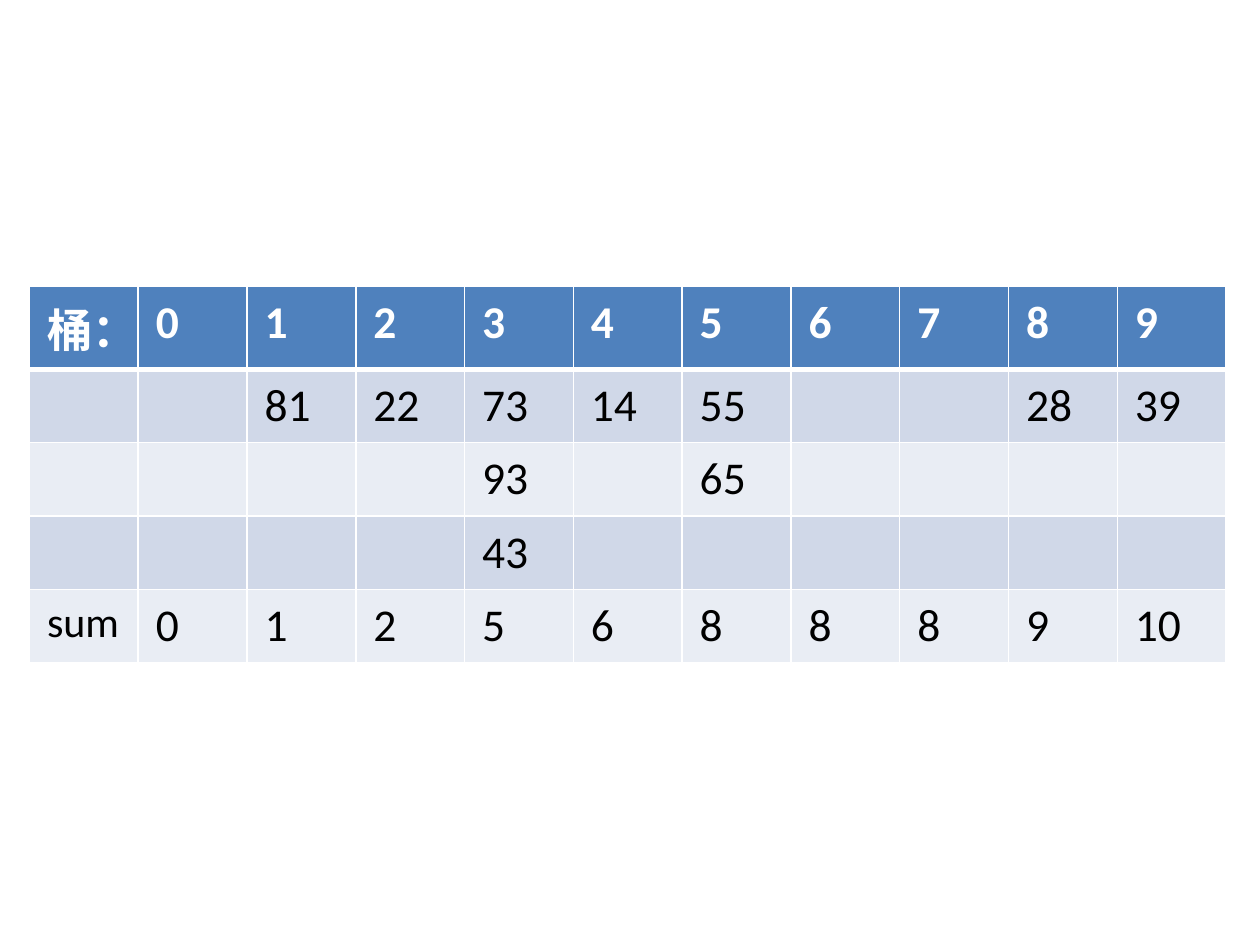
from lxml.etree import SubElement
from pptx import Presentation
from pptx.dml.color import RGBColor as Rgb
from pptx.oxml import parse_xml
from pptx.oxml.ns import nsdecls, qn
from pptx.util import Pt

COLORS = {
    "header": "4F81BD",
    "band_dark": "D0D8E8",
    "band_light": "E9EDF4",
    "white": "FFFFFF",
    "black": "000000",
}

# Bucket numbers, their contents and the running totals
BUCKETS = [
    ["桶：", "0", "1", "2", "3", "4", "5", "6", "7", "8", "9"],
    ["", "", "81", "22", "73", "14", "55", "", "", "28", "39"],
    ["", "", "", "", "93", "", "65", "", "", "", ""],
    ["", "", "", "", "43", "", "", "", "", "", ""],
    ["sum", "0", "1", "2", "5", "6", "8", "8", "8", "9", "10"],
]


class SlideWriter:
    font = "Calibri"
    size = 26
    label_size = 24
    margin_x, margin_y = 10.08, 5.04
    thin, thick = 1, 3

    def __init__(self, slide):
        self.slide = slide

    def table(self, rows, left, top, col_width, row_height):
        row_count, col_count = len(rows), len(rows[0])
        grid = self.slide.shapes.add_table(
            row_count, col_count, Pt(left), Pt(top),
            Pt(col_width * col_count), Pt(row_height * row_count)).table
        for column in grid.columns:
            column.width = Pt(col_width)
        for r, values in enumerate(rows):
            grid.rows[r].height = Pt(row_height)
            for c, value in enumerate(values):
                self.cell(grid.cell(r, c), value, r)

    def cell(self, cell, value, row):
        header = row == 0
        band = "header" if header else "band_dark" if row % 2 else "band_light"
        cell.margin_left = cell.margin_right = Pt(self.margin_x)
        cell.margin_top = cell.margin_bottom = Pt(self.margin_y)
        cell.fill.solid()
        cell.fill.fore_color.rgb = Rgb.from_string(COLORS[band])
        self.borders(cell, row)
        if value:
            run = cell.text_frame.paragraphs[0].add_run()
            run.text = value
            run.font.name = self.font
            run.font.size = Pt(self.label_size if value == "sum" else self.size)
            run.font.bold = header
            run.font.color.rgb = Rgb.from_string(
                COLORS["white" if header else "black"])

    def borders(self, cell, row):
        # The rule under the header belongs to both adjoining rows
        widths = {
            "lnL": self.thin,
            "lnR": self.thin,
            "lnT": self.thick if row == 1 else self.thin,
            "lnB": self.thick if row == 0 else self.thin,
        }
        properties = cell._tc.get_or_add_tcPr()
        for position, (side, width) in enumerate(widths.items()):
            line = parse_xml(f'<a:{side} {nsdecls("a")} w="{Pt(width)}"/>')
            fill = SubElement(line, qn("a:solidFill"))
            SubElement(fill, qn("a:srgbClr"), val=COLORS["white"])
            properties.insert(position, line)


def main():
    deck = Presentation()
    deck.slide_width, deck.slide_height = Pt(720), Pt(540)
    writer = SlideWriter(deck.slides.add_slide(deck.slide_layouts[6]))

    # Bucket table
    writer.table(BUCKETS, left=16.8, top=163.4, col_width=62.18, row_height=41.6)

    deck.save("out.pptx")


if __name__ == "__main__":
    main()
